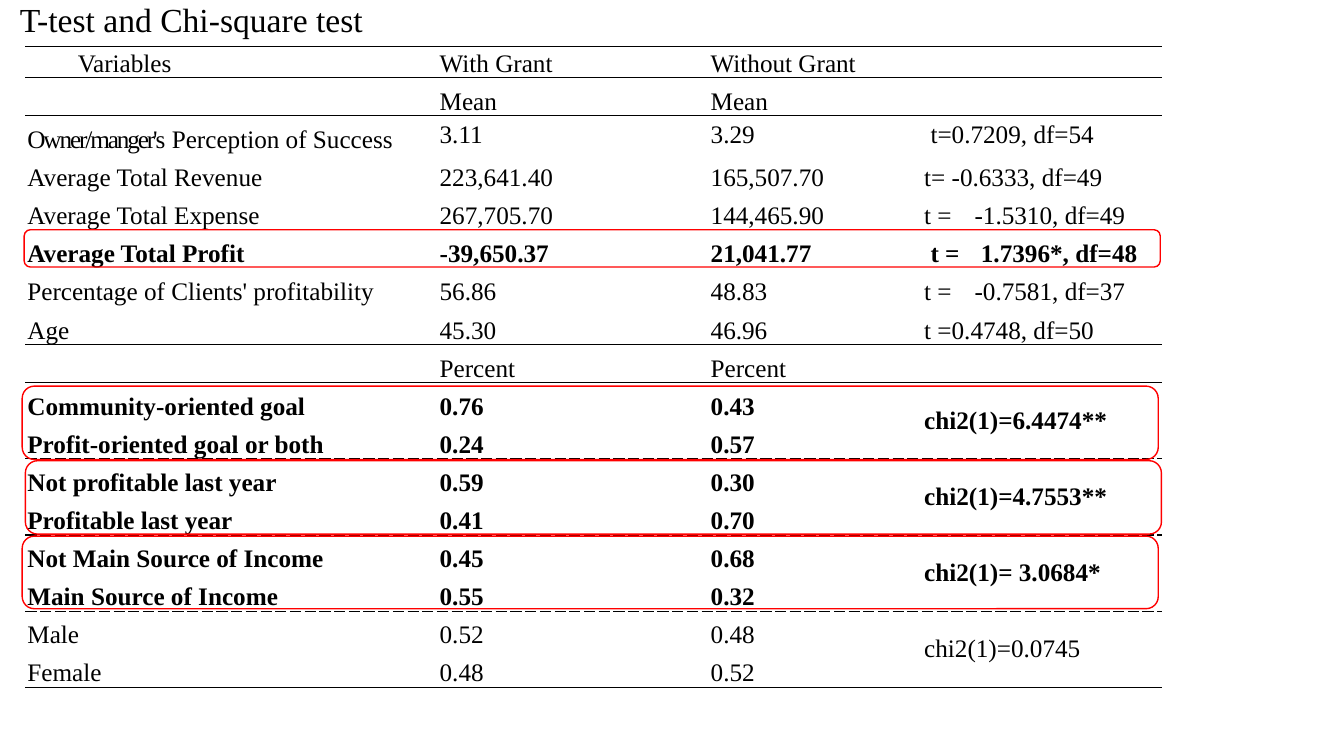
from dataclasses import dataclass
from typing import Optional

from lxml import etree
from pptx import Presentation
from pptx.dml.color import RGBColor
from pptx.enum.shapes import MSO_SHAPE
from pptx.enum.text import MSO_ANCHOR, MSO_AUTO_SIZE
from pptx.oxml.ns import qn
from pptx.util import Cm, Pt

ROUNDED = MSO_SHAPE.ROUNDED_RECTANGLE
BOTTOM, MIDDLE = MSO_ANCHOR.BOTTOM, MSO_ANCHOR.MIDDLE
FIT_SHAPE = MSO_AUTO_SIZE.SHAPE_TO_FIT_TEXT

FONT = "Times New Roman"
COLORS = {"text": "000000", "rule": "000000", "highlight": "FF0000"}
NO_STYLE = "{2D5ABB26-0587-4C30-8999-92F81FD0307C}"
SOLID, DASH = "solid", "dash"

LEFT, TOP = 0.64, 1.17
COLUMN_WIDTHS = (10.39, 6.83, 5.38, 6.05)
HEADER_HEIGHT, ROW_HEIGHT = 0.79, 0.96


@dataclass(frozen=True)
class Row:
    variable: str
    with_grant: str
    without_grant: str
    test: str = ""
    below: Optional[str] = None
    bold: bool = False
    wide: bool = False      # the third cell covers the last two columns
    paired: bool = False    # the test cell also covers the next row
    centred: bool = False   # the values sit in the middle of the row
    variable_indent: float = 0
    test_indent: float = 0
    test_tab: float = 0
    tight: str = ""         # leading part of the variable set closer

    @property
    def texts(self) -> tuple[str, ...]:
        return self.variable, self.with_grant, self.without_grant, self.test


@dataclass(frozen=True)
class Highlight:
    left: float
    top: float
    height: float


ROWS = (
    Row("Variables", "With Grant", "Without Grant", below=SOLID, wide=True,
        variable_indent=1.27),
    Row("", "Mean", "Mean", below=SOLID, wide=True),
    Row("Owner/manger's Perception of Success", "3.11", "3.29", "t=0.7209, df=54",
        centred=True, test_indent=0.16, tight="Owner/manger's"),
    Row("Average Total Revenue", "223,641.40", "165,507.70", "t= -0.6333, df=49"),
    Row("Average Total Expense", "267,705.70", "144,465.90", "t =\t-1.5310, df=49",
        test_tab=1.02),
    Row("Average Total Profit", "-39,650.37", "21,041.77", "t =\t1.7396*, df=48",
        bold=True, test_indent=0.16, test_tab=1.22),
    Row("Percentage of Clients' profitability", "56.86", "48.83", "t =\t-0.7581, df=37",
        test_tab=1.02),
    Row("Age", "45.30", "46.96", "t =0.4748, df=50", below=SOLID),
    Row("", "Percent", "Percent", below=SOLID),
    Row("Community-oriented goal", "0.76", "0.43", "chi2(1)=6.4474**",
        bold=True, paired=True),
    Row("Profit-oriented goal or both", "0.24", "0.57", below=DASH, bold=True),
    Row("Not profitable last year", "0.59", "0.30", "chi2(1)=4.7553**",
        bold=True, paired=True),
    Row("Profitable last year", "0.41", "0.70", below=DASH, bold=True),
    Row("Not Main Source of Income", "0.45", "0.68", "chi2(1)= 3.0684*",
        bold=True, paired=True),
    Row("Main Source of Income", "0.55", "0.32", below=DASH, bold=True),
    Row("Male", "0.52", "0.48", "chi2(1)=0.0745", paired=True),
    Row("Female", "0.48", "0.52", below=SOLID),
)

HIGHLIGHT_WIDTH = 28.63
HIGHLIGHTS = (
    Highlight(0.61, 5.79, 0.94),
    Highlight(0.56, 9.73, 1.85),
    Highlight(0.64, 11.61, 1.85),
    Highlight(0.56, 13.51, 1.83),
)


def style_run(run, size: float, bold: bool = False) -> None:
    run.font.name = FONT
    run.font.size = Pt(size)
    run.font.bold = bold
    run.font.color.rgb = RGBColor.from_string(COLORS["text"])


def add_rule(cell, edge: str, dash: Optional[str]) -> None:
    """Draw the lnT or lnB edge of a cell; no dash kind means no line."""
    line = etree.Element(qn(f"a:{edge}"), w=str(Pt(1)))
    if dash is None:
        etree.SubElement(line, qn("a:noFill"))
    else:
        fill = etree.SubElement(line, qn("a:solidFill"))
        etree.SubElement(fill, qn("a:srgbClr"), val=COLORS["rule"])
        etree.SubElement(line, qn("a:prstDash"), val=dash)
    cell._tc.get_or_add_tcPr().insert(0, line)


def indent(paragraph, margin: float, tab: float) -> None:
    properties = paragraph._p.get_or_add_pPr()
    properties.set("marL", str(Cm(margin)))
    properties.set("indent", "0")
    if tab:
        tabs = etree.SubElement(properties, qn("a:tabLst"))
        etree.SubElement(tabs, qn("a:tab"), pos=str(Cm(tab)), algn="l")


def fill_cell(cell, row: Row, column: int) -> None:
    is_test = column == 3
    cell.margin_left = cell.margin_right = Cm(0.05)
    cell.margin_top = cell.margin_bottom = 0
    middle = (row.centred and column > 0) or (row.paired and is_test)
    cell.vertical_anchor = MIDDLE if middle else BOTTOM
    cell.fill.background()
    text = row.texts[column]
    if not text:
        return
    paragraph = cell.text_frame.paragraphs[0]
    if column == 0:
        indent(paragraph, row.variable_indent, 0)
    elif is_test:
        indent(paragraph, row.test_indent, row.test_tab)
    if column == 0 and row.tight:
        paragraph.text = row.tight
        paragraph.runs[0].font._element.set("spc", "-150")
        paragraph.add_run().text = text.removeprefix(row.tight)
    else:
        paragraph.text = text
    for run in paragraph.runs:
        style_run(run, 18, row.bold)


def add_results_table(slide) -> None:
    height = HEADER_HEIGHT + ROW_HEIGHT * (len(ROWS) - 1)
    table = slide.shapes.add_table(len(ROWS), len(COLUMN_WIDTHS), Cm(LEFT), Cm(TOP),
                                   Cm(sum(COLUMN_WIDTHS)), Cm(height)).table
    table.first_row = table.horz_banding = False
    table._tbl.tblPr.find(qn("a:tableStyleId")).text = NO_STYLE
    for column, width in zip(table.columns, COLUMN_WIDTHS):
        column.width = Cm(width)

    above = SOLID
    for index, row in enumerate(ROWS):
        table.rows[index].height = Cm(ROW_HEIGHT if index else HEADER_HEIGHT)
        for column in range(len(COLUMN_WIDTHS)):
            cell = table.cell(index, column)
            fill_cell(cell, row, column)
            spans_pair = row.paired and column == 3
            add_rule(cell, "lnB", ROWS[index + 1].below if spans_pair else row.below)
            add_rule(cell, "lnT", above)
        if row.wide:
            table.cell(index, 2).merge(table.cell(index, 3))
        if row.paired:
            table.cell(index, 3).merge(table.cell(index + 1, 3))
        above = row.below


def add_highlight(slide, highlight: Highlight) -> None:
    frame = slide.shapes.add_shape(ROUNDED, Cm(highlight.left), Cm(highlight.top),
                                   Cm(HIGHLIGHT_WIDTH), Cm(highlight.height))
    frame.shadow.inherit = False
    frame.fill.background()
    frame.line.color.rgb = RGBColor.from_string(COLORS["highlight"])
    frame.line.width = Pt(1)


def add_title(slide) -> None:
    title = slide.shapes.add_textbox(Cm(0.25), Cm(-0.15), Cm(23.11), Cm(1.28))
    title.text_frame.word_wrap = True
    title.text_frame.auto_size = FIT_SHAPE
    title.text_frame.text = "T-test and Chi-square test"
    style_run(title.text_frame.paragraphs[0].runs[0], 24)


def main() -> None:
    presentation = Presentation()
    presentation.slide_width, presentation.slide_height = Cm(33.87), Cm(19.05)
    slide = presentation.slides.add_slide(presentation.slide_layouts[6])
    add_results_table(slide)
    for highlight in HIGHLIGHTS:
        add_highlight(slide, highlight)
    add_title(slide)
    presentation.save("out.pptx")


if __name__ == "__main__":
    main()
